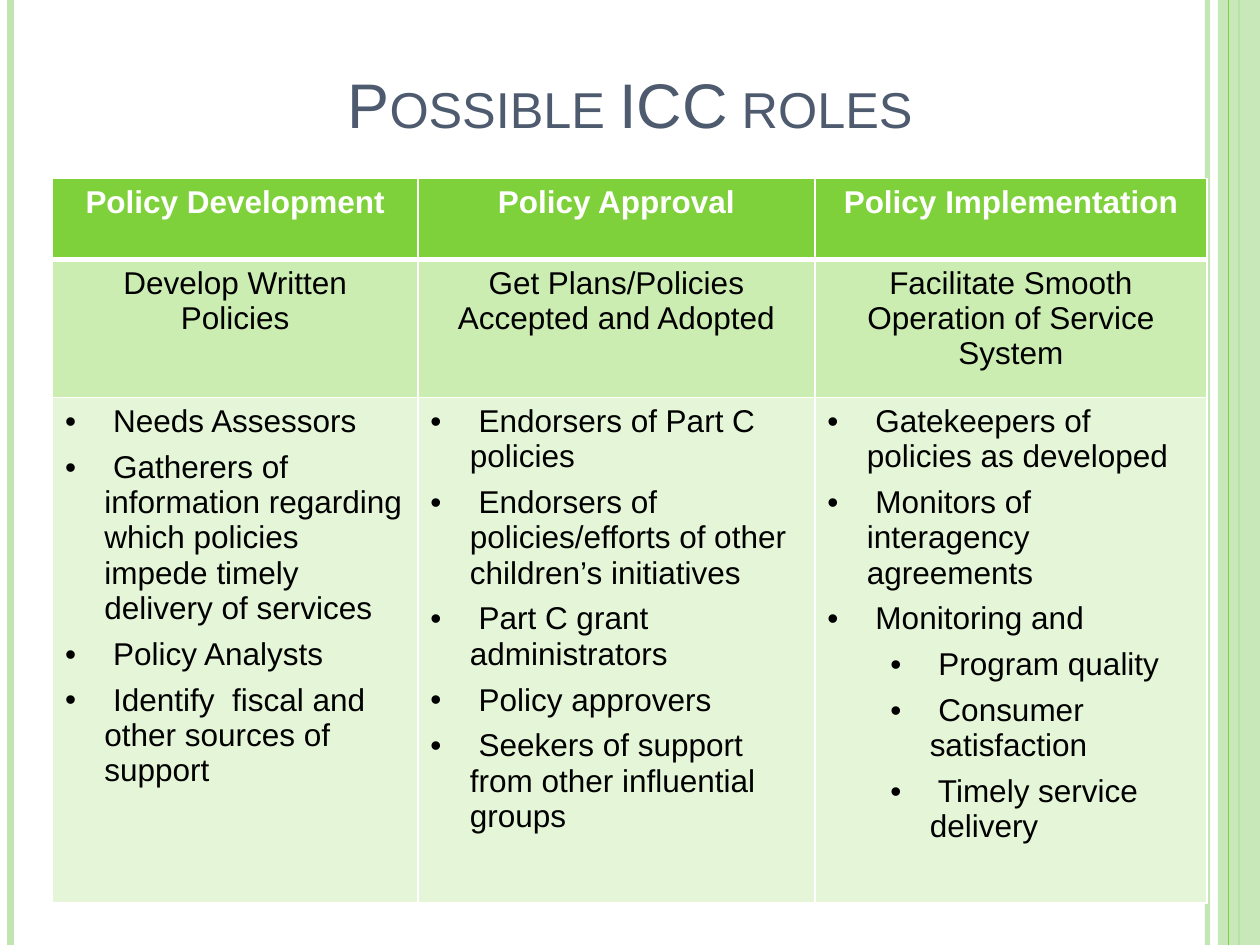
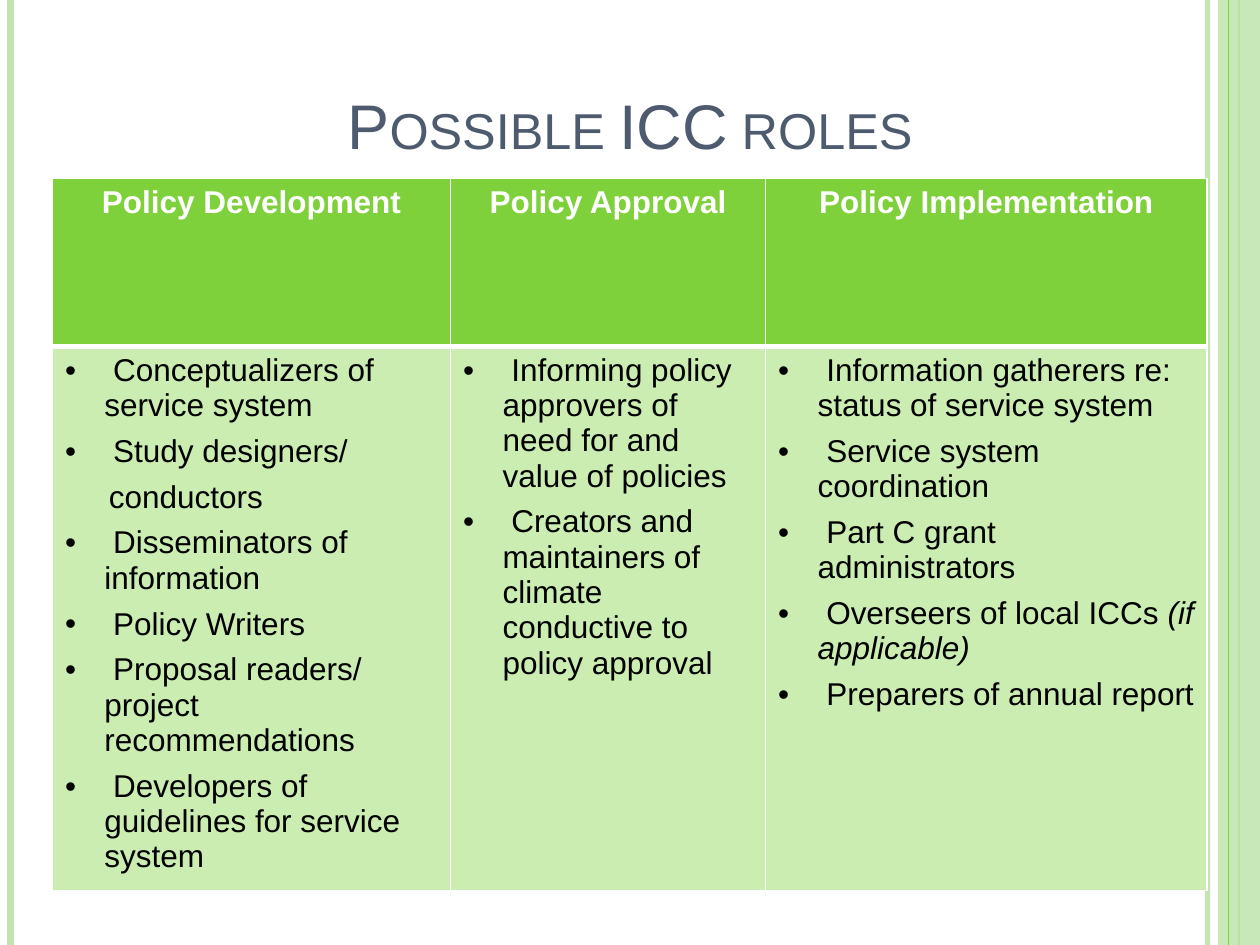
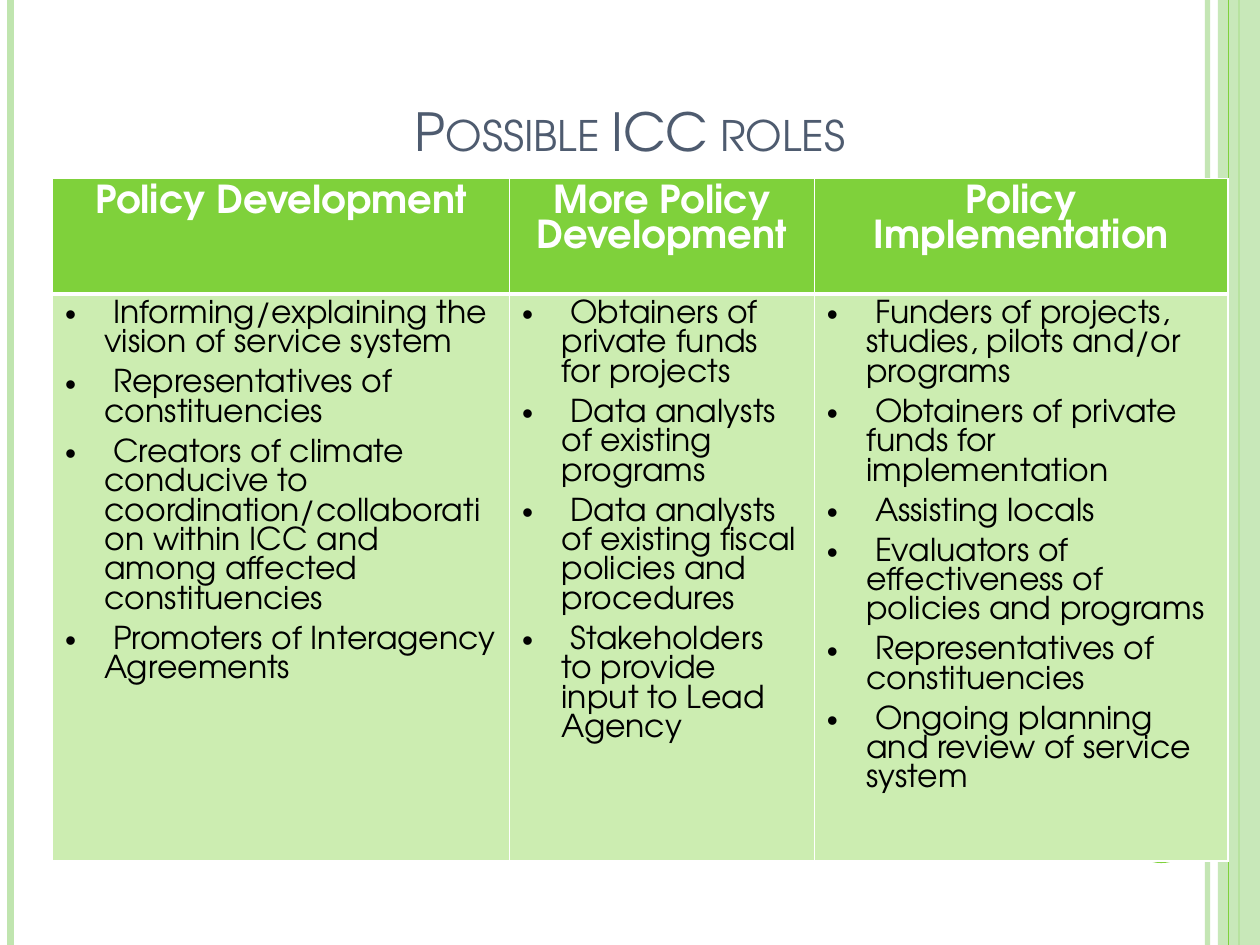
from dataclasses import dataclass

import lxml.etree
import pptx
import pptx.dml.color
import pptx.enum.shapes
import pptx.enum.text
import pptx.oxml.ns
import pptx.util

Pt = pptx.util.Pt
qn = pptx.oxml.ns.qn
ALIGN = pptx.enum.text.PP_ALIGN
SHAPE = pptx.enum.shapes.MSO_SHAPE

GREEN, PALE, SLATE = "7FD13B", "C0E5AF", "4E5B6F"
WHITE, BLACK = "FFFFFF", "000000"
MID_ROW, LIGHT_ROW = "CCEDB1", "E5F6D8"
HANG = 22.5  # hanging indent of a bullet
SUB_STEP = 36  # extra indent of a second-level bullet


@dataclass
class Item:
    """One paragraph of a list cell."""
    text: str
    level: int = 0
    bullet: bool = True
    italic_end: str = ""


def rgb(color):
    return pptx.dml.color.RGBColor.from_string(color)


def sub(parent, tag, **attrs):
    return lxml.etree.SubElement(parent, qn(tag), attrs)


def add_text(p, text, font="Arial", size=18, color=BLACK, bold=False,
             italic=False, small_caps=False):
    r = p.add_run()
    r.text = text
    f = r.font
    f.name, f.size, f.bold, f.italic = font, Pt(size), bold, italic
    f.color.rgb = rgb(color)
    if small_caps:
        r._r.get_or_add_rPr().set("cap", "small")


def set_alpha(fill_parent, percent):
    clr = fill_parent.find(".//" + qn("a:srgbClr"))
    sub(clr, "a:alpha", val=str(percent * 1000))


def set_borders(cell, top, bottom):
    tcPr = cell._tc.get_or_add_tcPr()
    sides = (("a:lnL", 1), ("a:lnR", 1), ("a:lnT", top), ("a:lnB", bottom))
    for i, (tag, width) in enumerate(sides):
        ln = sub(tcPr, tag, w=str(Pt(width)))
        sub(sub(ln, "a:solidFill"), "a:srgbClr", val=WHITE)
        tcPr.insert(i, ln)  # borders come before the fill


class Deck:
    def __init__(self, prs):
        self.prs = prs
        self.font = "Arial"
        self.s = None

    def new_slide(self, font):
        self.font = font
        self.s = self.prs.slides.add_slide(self.prs.slide_layouts[5])

    def vline(self, x, color, width, alpha=None):
        c = self.s.shapes.add_connector(
            pptx.enum.shapes.MSO_CONNECTOR.STRAIGHT,
            Pt(x), 0, Pt(x), self.prs.slide_height)
        c.line.color.rgb = rgb(color)
        c.line.width = Pt(width)
        spPr = c._element.spPr
        if alpha:
            set_alpha(spPr, alpha)
        sub(spPr, "a:effectLst")

    def shape(self, kind, x, y, w, h, color, alpha=None):
        sp = self.s.shapes.add_shape(kind, Pt(x), Pt(y), Pt(w), Pt(h))
        sp.shadow.inherit = False
        sp.fill.solid()
        sp.fill.fore_color.rgb = rgb(color)
        sp.line.fill.background()
        if alpha:
            set_alpha(sp._element.spPr, alpha)

    def bands(self):
        self.vline(690, PALE, 3, alpha=93)
        self.vline(6, PALE, 4.5)
        self.vline(708, GREEN, 1.5)
        self.shape(SHAPE.RECTANGLE, 696, 0, 24, 540, PALE, alpha=87)
        self.vline(702, GREEN, 0.75)

    def disk(self):
        self.shape(SHAPE.OVAL, 642, 450, 43.2, 43.2, GREEN)

    def title(self, text, y, h, size):
        sp = self.s.shapes.title
        sp.left, sp.top, sp.width, sp.height = Pt(36), Pt(y), Pt(648), Pt(h)
        tf = sp.text_frame
        tf.word_wrap = True
        tf.auto_size = pptx.enum.text.MSO_AUTO_SIZE.NONE
        tf.vertical_anchor = pptx.enum.text.MSO_ANCHOR.BOTTOM
        p = tf.paragraphs[0]
        p.alignment = ALIGN.CENTER
        add_text(p, text, font=self.font, size=size, color=SLATE,
                 small_caps=True)

    def item(self, p, item):
        p.level = item.level
        p.space_before = p.space_after = Pt(3)
        pPr = p._p.get_or_add_pPr()
        if item.bullet:
            left, first, lead = HANG + SUB_STEP * item.level, -HANG, " "
            sub(pPr, "a:buFont", typeface="Arial")
            sub(pPr, "a:buChar", char="•")
        else:
            left, first, lead = 25, 0, ""
        pPr.set("marL", str(Pt(left)))
        pPr.set("indent", str(Pt(first)))
        add_text(p, lead + item.text, font=self.font)
        if item.italic_end:
            add_text(p, item.italic_end, font=self.font, italic=True)

    def cell(self, cell, content, fill, **fmt):
        cell.fill.solid()
        cell.fill.fore_color.rgb = rgb(fill)
        tf = cell.text_frame
        if isinstance(content, str):
            p = tf.paragraphs[0]
            p.alignment = ALIGN.CENTER
            add_text(p, content, font=self.font, **fmt)
            return
        for i, entry in enumerate(content):
            p = tf.paragraphs[0] if i == 0 else tf.add_paragraph()
            self.item(p, Item(entry) if isinstance(entry, str) else entry)

    def table(self, widths, heights, rows, head_size=18):
        frame = self.s.shapes.add_table(
            len(rows), len(widths), Pt(30), Pt(102),
            Pt(sum(widths)), Pt(sum(heights)))
        tbl = frame.table
        for col, w in zip(tbl.columns, widths):
            col.width = Pt(w)
        for row, h in zip(tbl.rows, heights):
            row.height = Pt(h)
        fills = (GREEN, MID_ROW, LIGHT_ROW)
        for i, contents in enumerate(rows):
            fmt = {}
            if i == 0:
                fmt = dict(size=head_size, color=WHITE, bold=True)
            for j, content in enumerate(contents):
                cell = tbl.cell(i, j)
                self.cell(cell, content, fills[i], **fmt)
                set_borders(cell, top=3 if i == 1 else 1,
                            bottom=3 if i == 0 else 1)


TITLE = "Possible ICC roles"
PHASES = ["Policy Development", "Policy Approval", "Policy Implementation"]

ROLES_BY_GOAL = [
    PHASES,
    ["Develop Written Policies",
     "Get Plans/Policies Accepted and Adopted",
     "Facilitate Smooth Operation of Service System"],
    [["Needs Assessors",
      "Gatherers of information regarding which policies impede timely "
      "delivery of services",
      "Policy Analysts",
      "Identify  fiscal and other sources of support"],
     ["Endorsers of Part C policies",
      "Endorsers of policies/efforts of other children’s initiatives",
      "Part C grant administrators",
      "Policy approvers",
      "Seekers of support from other influential groups"],
     ["Gatekeepers of policies as developed",
      "Monitors of interagency agreements",
      "Monitoring and",
      Item("Program quality", level=1),
      Item("Consumer satisfaction", level=1),
      Item("Timely service delivery", level=1)]],
]

MORE_ROLES = [
    PHASES,
    [["Conceptualizers of service system",
      "Study designers/",
      Item("conductors", bullet=False),
      "Disseminators of information",
      "Policy Writers",
      "Proposal readers/ project recommendations",
      "Developers of guidelines for service system"],
     ["Informing policy approvers of need for and value of policies",
      "Creators and maintainers of climate conductive to policy approval"],
     ["Information gatherers re: status of service system",
      "Service system coordination",
      "Part C grant administrators",
      Item("Overseers of local ICCs ", italic_end="(if applicable)"),
      "Preparers of annual report"]],
]

FURTHER_ROLES = [
    ["Policy Development", "More Policy Development",
     "Policy Implementation"],
    [["Informing/explaining the vision of service system",
      "Representatives of constituencies",
      "Creators of climate conducive to coordination/collaboration within "
      "ICC and among affected constituencies",
      "Promoters of Interagency Agreements"],
     ["Obtainers of private funds for projects",
      "Data analysts of existing programs",
      "Data analysts of existing fiscal policies and procedures",
      "Stakeholders to provide input to Lead Agency"],
     ["Funders of projects, studies, pilots and/or programs",
      "Obtainers of private funds for implementation",
      "Assisting locals",
      "Evaluators of effectiveness of policies and programs",
      "Representatives of constituencies",
      "Ongoing planning and review of service system"]],
]


def main():
    prs = pptx.Presentation()
    prs.slide_width, prs.slide_height = Pt(720), Pt(540)
    deck = Deck(prs)

    # Roles by goal
    deck.new_slide("Arial")
    deck.bands()
    deck.title(TITLE, y=30, h=54, size=36)
    deck.table([208.8, 226.8, 224.2], [46.3, 79, 288.7], ROLES_BY_GOAL)

    # More roles
    deck.new_slide("Arial")
    deck.bands()
    deck.title(TITLE, y=30, h=66, size=36)
    deck.table([227.5, 180, 252.3], [96, 311], MORE_ROLES)

    # Further roles
    deck.new_slide("TeX Gyre Adventor")
    deck.bands()
    deck.disk()
    deck.title(TITLE, y=36, h=60, size=30)
    deck.table([261.2, 174.2, 236.4], [66, 324], FURTHER_ROLES, head_size=22)

    prs.save("out.pptx")


if __name__ == "__main__":
    main()
